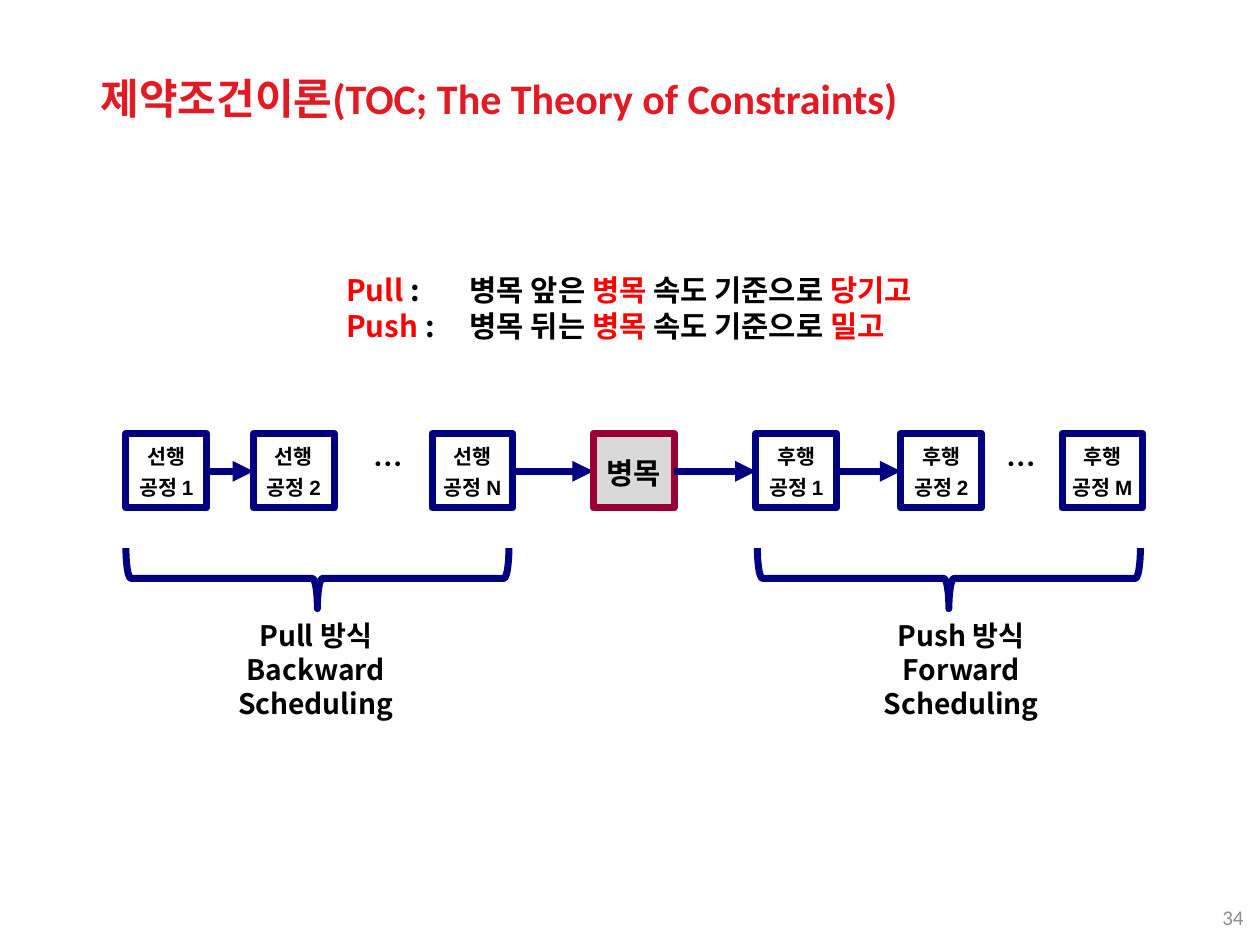
from pptx import Presentation
from pptx.dml.color import RGBColor
from pptx.enum.shapes import MSO_CONNECTOR, MSO_SHAPE
from pptx.enum.text import MSO_ANCHOR, PP_ALIGN
from pptx.oxml.ns import qn
from pptx.util import Cm, Pt
from lxml.etree import SubElement

NAVY = RGBColor(0x00, 0x00, 0x80)
WINE = RGBColor(0x99, 0x00, 0x33)
GREY = RGBColor(0xD9, 0xD9, 0xD9)
WHITE = RGBColor(0xFF, 0xFF, 0xFF)
BLACK = RGBColor(0x00, 0x00, 0x00)
RED = RGBColor(0xFF, 0x00, 0x00)
TITLE = RGBColor(0xE2, 0x1A, 0x23)
PALE = RGBColor(0x8C, 0x8C, 0x8C)
NOTO = "Noto Sans CJK KR"


def write(frame, lines, size, font=NOTO, color=BLACK, bold=True, **form):
    for i, line in enumerate(lines):
        para = frame.paragraphs[0] if i == 0 else frame.add_paragraph()
        for key, val in form.items():
            setattr(para, key, val)
        for part, tint in [(line, color)] if isinstance(line, str) else line:
            run = para.add_run()
            run.text = part
            look = {"size": Pt(size), "name": font, "bold": bold}
            for key, val in look.items():
                setattr(run.font, key, val)
            run.font.color.rgb = tint
            SubElement(run.font._element, qn("a:ea"), typeface=NOTO)


def add_text(left, top, width, height, **form):
    frame = slide.shapes.add_textbox(Cm(left), Cm(top), Cm(width), Cm(height)).text_frame
    for key, val in form.items():
        setattr(frame, key, val)
    return frame


deck = Presentation()
deck.slide_width, deck.slide_height = Cm(25.4), Cm(19.05)
slide = deck.slides.add_slide(deck.slide_layouts[6])

flat = dict.fromkeys(["margin_left", "margin_right", "margin_top", "margin_bottom"], 0)
frame = add_text(2.03, 0.61, 20.22, 2.74, word_wrap=True,
                 vertical_anchor=MSO_ANCHOR.MIDDLE, **flat)
write(frame, ["제약조건이론(TOC; The Theory of Constraints)"], 24, "Calibri", TITLE,
      space_before=Pt(4.8))

rules = [("Pull", "앞은", "당기고"), ("Push", "뒤는", "밀고")]
lines = [[(name, RED), (f" :\t병목 {side} ", BLACK), ("병목", RED),
          (" 속도 기준으로 ", BLACK), (verb, RED)] for name, side, verb in rules]
frame = add_text(6.73, 5.36, 12.85, 1.7, word_wrap=False)
write(frame, lines, 16.9)
for para in frame.paragraphs:
    prop = para._p.get_or_add_pPr()
    prop.set("marL", str(Cm(2.49)))
    prop.set("indent", str(-Cm(2.49)))

WIDE, HIGH, TOP, MID = 1.63, 1.5, 8.74, 9.5
steps = [
    (2.54, ["선행", "공정 1"], True),
    (5.11, ["선행", "공정 2"], False),
    (8.71, ["선행", "공정 N"], True),
    (11.96, ["병목"], True),
    (15.24, ["후행", "공정 1"], True),
    (18.16, ["후행", "공정 2"], False),
    (21.41, ["후행", "공정 M"], False),
]
inset = {"margin_left": Cm(0.08), "margin_right": Cm(0.08), "word_wrap": True,
         "vertical_anchor": MSO_ANCHOR.MIDDLE}
for i, (left, lines, flow) in enumerate(steps):
    neck = len(lines) == 1
    box = slide.shapes.add_shape(MSO_SHAPE.RECTANGLE, Cm(left), Cm(TOP), Cm(WIDE), Cm(HIGH))
    box.shadow.inherit = False
    box.fill.solid()
    box.fill.fore_color.rgb = GREY if neck else WHITE
    box.line.color.rgb = WINE if neck else NAVY
    box.line.width = Pt(4)
    for key, val in inset.items():
        setattr(box.text_frame, key, val)
    size, font = (16.9, NOTO) if neck else (11.8, "Arial")
    write(box.text_frame, lines, size, font, alignment=PP_ALIGN.CENTER,
          line_spacing=1.1, space_before=Pt(size * 0.2))
    if flow:
        arrow = slide.shapes.add_connector(MSO_CONNECTOR.STRAIGHT, Cm(left + WIDE), Cm(MID),
                                           Cm(steps[i + 1][0]), Cm(MID))
        arrow.line.color.rgb = NAVY
        arrow.line.width = Pt(4)
        SubElement(arrow.line._get_or_add_ln(), qn("a:tailEnd"), type="triangle")
        SubElement(arrow._element.spPr, qn("a:effectLst"))

for left in (7.29, 20.04):
    write(add_text(left, 8.86, 1.12, 0.99, word_wrap=False), ["…"], 16.9)

modes = [
    (5.79, 3.28, 6.17, ["Pull 방식", "Backward Scheduling"]),
    (18.52, 16.51, 5.74, ["Push 방식", "Forward Scheduling"]),
]
for left, edge, width, lines in modes:
    brace = slide.shapes.add_shape(MSO_SHAPE.LEFT_BRACE, Cm(left), Cm(7.8), Cm(1.22), Cm(7.72))
    brace.rotation = 270
    brace.shadow.inherit = False
    brace.fill.solid()
    brace.fill.fore_color.rgb = WHITE
    brace.line.color.rgb = NAVY
    brace.line.width = Pt(4)
    write(add_text(edge, 12.34, width, 1.63, word_wrap=True), lines, 16.1,
          alignment=PP_ALIGN.CENTER)

frame = add_text(18.67, 17.98, 6.65, 1.02, word_wrap=True, vertical_anchor=MSO_ANCHOR.MIDDLE)
write(frame, ["34"], 12, "Calibri", PALE, False, alignment=PP_ALIGN.RIGHT)

deck.save("out.pptx")
